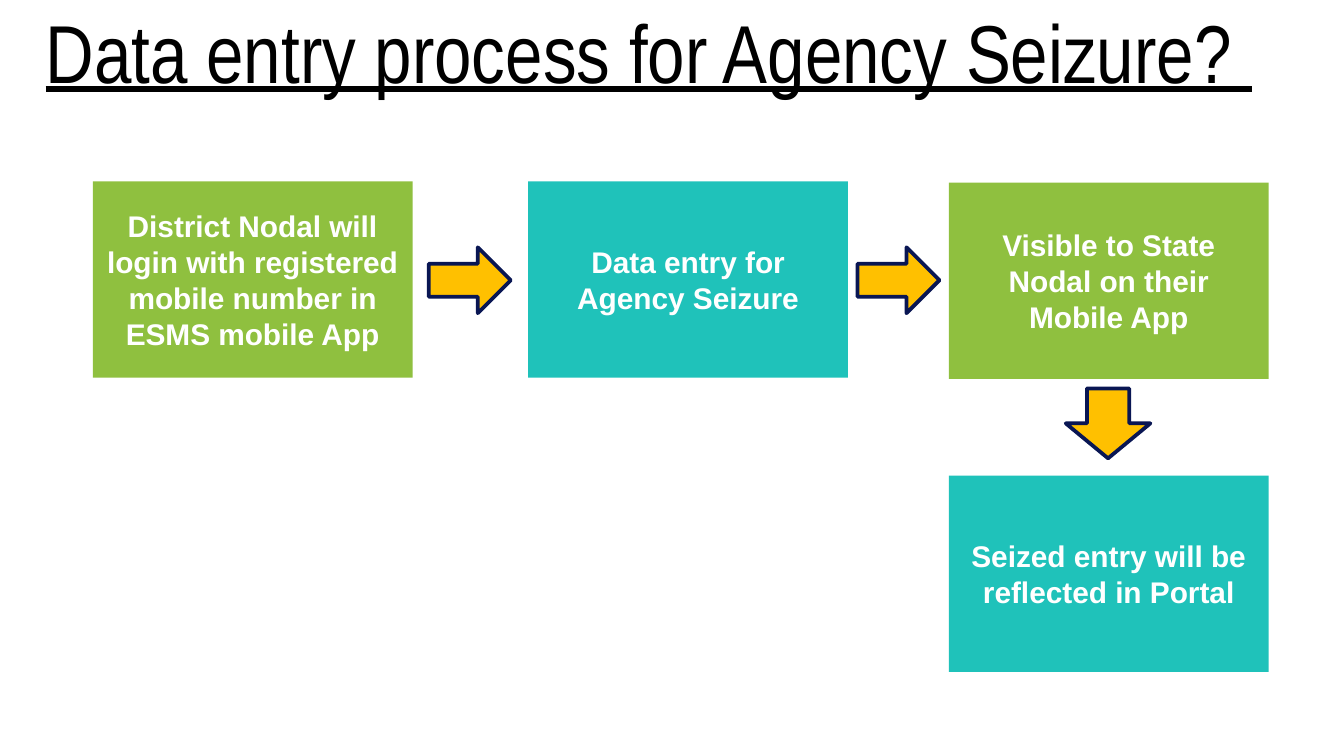
from dataclasses import dataclass

from lxml import etree
from pptx import Presentation
from pptx.dml.color import RGBColor
from pptx.enum.shapes import MSO_SHAPE
from pptx.enum.text import MSO_ANCHOR, PP_ALIGN
from pptx.oxml.ns import qn
from pptx.shapes.autoshape import Shape
from pptx.slide import Slide
from pptx.util import Inches, Pt

RECTANGLE = MSO_SHAPE.RECTANGLE
RIGHT_ARROW = MSO_SHAPE.RIGHT_ARROW
DOWN_ARROW = MSO_SHAPE.DOWN_ARROW
MIDDLE = MSO_ANCHOR.MIDDLE
LEFT = PP_ALIGN.LEFT
CENTER = PP_ALIGN.CENTER


@dataclass(frozen=True)
class Theme:
    green: str = "8FC03F"
    teal: str = "1FC2BA"
    amber: str = "FFC000"
    navy: str = "091653"
    black: str = "000000"
    white: str = "FFFFFF"
    title_font: str = "Arial Narrow"
    body_font: str = "Arial"
    title_size: int = 44
    body_size: int = 16
    outline_width: int = 2


@dataclass(frozen=True)
class Step:
    text: str
    left: float
    top: float
    color: str


@dataclass(frozen=True)
class Arrow:
    kind: MSO_SHAPE
    left: float
    top: float
    width: float
    height: float


THEME = Theme()
SLIDE_WIDTH = 10
SLIDE_HEIGHT = SLIDE_WIDTH * 9 / 16
STEP_WIDTH = 2.38
STEP_HEIGHT = 1.46

STEPS = (
    Step("District Nodal will login with registered mobile number in ESMS mobile App",
         0.69, 1.35, THEME.green),
    Step("Data entry for Agency Seizure", 3.93, 1.35, THEME.teal),
    Step("Visible to State Nodal on their Mobile App", 7.06, 1.36, THEME.green),
    Step("Seized entry will be reflected in Portal", 7.06, 3.54, THEME.teal),
)
ARROWS = (
    Arrow(RIGHT_ARROW, 3.19, 1.84, 0.61, 0.49),
    Arrow(RIGHT_ARROW, 6.38, 1.84, 0.61, 0.49),
    Arrow(DOWN_ARROW, 7.93, 2.89, 0.63, 0.52),
)


def write_text(shape: Shape, text: str, *, font: str, size: int, color: str,
               alignment: PP_ALIGN, bold: bool = False,
               underline: bool = False) -> None:
    frame = shape.text_frame
    frame.word_wrap = True
    frame.vertical_anchor = MIDDLE
    paragraph = frame.paragraphs[0]
    paragraph.alignment = alignment
    run = paragraph.add_run()
    run.text = text
    run.font.name = font
    run.font.size = Pt(size)
    run.font.bold = bold
    run.font.underline = underline
    run.font.color.rgb = RGBColor.from_string(color)


def add_filled_shape(slide: Slide, kind: MSO_SHAPE, left: float, top: float,
                     width: float, height: float, color: str) -> Shape:
    shape = slide.shapes.add_shape(
        kind, Inches(left), Inches(top), Inches(width), Inches(height))
    shape.shadow.inherit = False
    shape.fill.solid()
    shape.fill.fore_color.rgb = RGBColor.from_string(color)
    shape.line.fill.background()
    return shape


def add_title(slide: Slide, text: str) -> None:
    title = slide.shapes.add_textbox(
        Inches(0.24), Inches(0.13), Inches(9.59), Inches(0.49))
    frame = title.text_frame
    frame.margin_left = frame.margin_right = Inches(0.1)
    frame.margin_top = frame.margin_bottom = Inches(0.1)
    write_text(title, text, font=THEME.title_font, size=THEME.title_size,
               color=THEME.black, alignment=LEFT, underline=True)


def add_step(slide: Slide, step: Step) -> None:
    box = add_filled_shape(slide, RECTANGLE, step.left, step.top,
                           STEP_WIDTH, STEP_HEIGHT, step.color)
    write_text(box, step.text, font=THEME.body_font, size=THEME.body_size,
               color=THEME.white, alignment=CENTER, bold=True)


def add_arrow(slide: Slide, arrow: Arrow) -> None:
    shape = add_filled_shape(slide, arrow.kind, arrow.left, arrow.top,
                             arrow.width, arrow.height, THEME.amber)
    shape.line.color.rgb = RGBColor.from_string(THEME.navy)
    shape.line.width = Pt(THEME.outline_width)
    outline = shape.element.spPr.find(qn("a:ln"))
    etree.SubElement(outline, qn("a:round"))


def main() -> None:
    presentation = Presentation()
    presentation.slide_width = Inches(SLIDE_WIDTH)
    presentation.slide_height = Inches(SLIDE_HEIGHT)
    slide = presentation.slides.add_slide(presentation.slide_layouts[6])
    add_title(slide, "Data entry process for Agency Seizure? ")
    for step in STEPS:
        add_step(slide, step)
    for arrow in ARROWS:
        add_arrow(slide, arrow)
    presentation.save("out.pptx")


if __name__ == "__main__":
    main()
